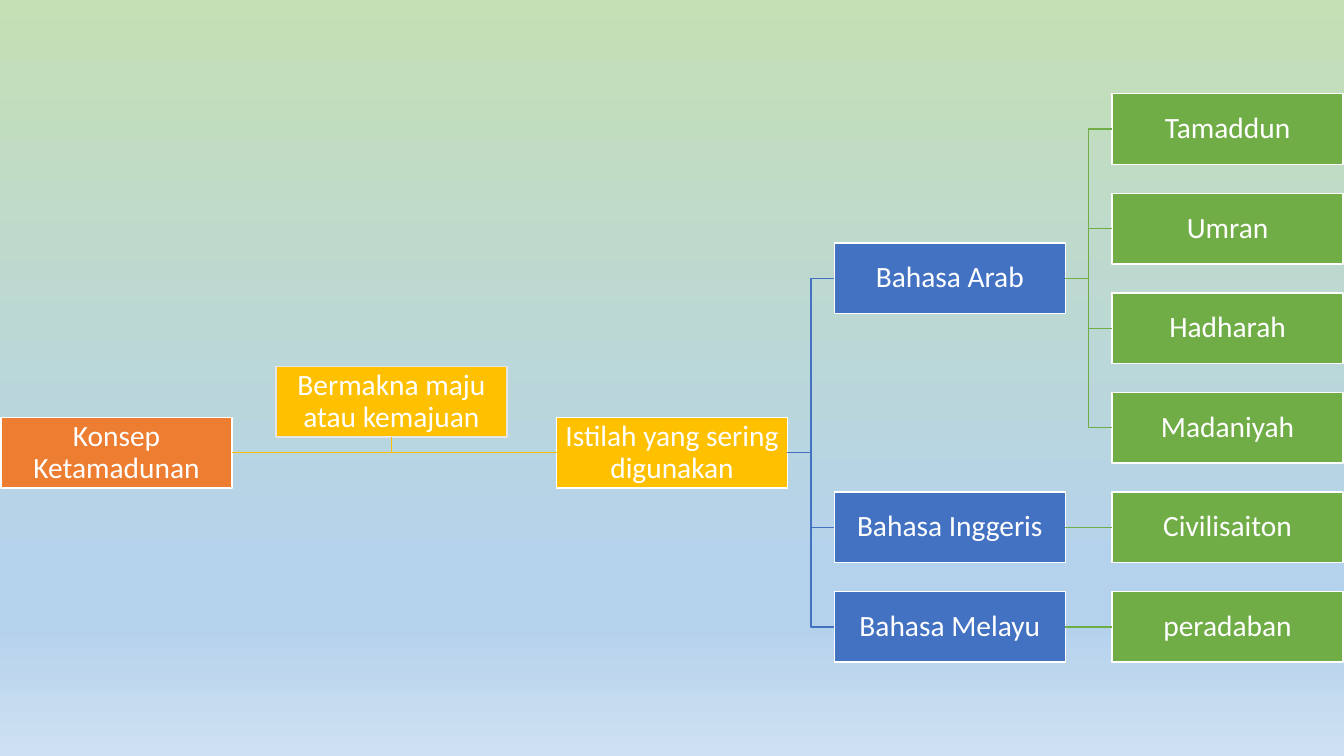
import pptx
import pptx.util
import pptx.dml.color
import pptx.enum.shapes
import pptx.enum.text
import pptx.oxml.ns
from lxml import etree

RGBColor = pptx.dml.color.RGBColor
Inches = pptx.util.Inches
Connector = pptx.enum.shapes.MSO_CONNECTOR
qn = pptx.oxml.ns.qn

ORANGE = RGBColor(0xED, 0x7D, 0x31)
GOLD = RGBColor(0xFF, 0xC0, 0x00)
BLUE = RGBColor(0x43, 0x72, 0xC3)
GREEN = RGBColor(0x70, 0xAD, 0x47)
WHITE = RGBColor(0xFF, 0xFF, 0xFF)
PALE_GREY = RGBColor(0xE6, 0xE6, 0xE6)
MEADOW = RGBColor(0xC5, 0xE0, 0xB4)
SKY = RGBColor(0xB5, 0xD2, 0xEC)
PALE_SKY = RGBColor(0xCE, 0xE1, 0xF2)

# Grid: five levels across, six leaf rows down
LEFT, RIGHT_LEVEL, LEVELS = 0.01, 11.03, 5
FIRST_ROW, LAST_ROW, ROWS = 1.28, 6.22, 6
LEVEL_STEP = (RIGHT_LEVEL - LEFT) / (LEVELS - 1)
ROW_STEP = (LAST_ROW - FIRST_ROW) / (ROWS - 1)
BOX_W, BOX_H = 2.29, 0.7

deck = pptx.Presentation()
deck.slide_width, deck.slide_height = Inches(13.33), Inches(7.5)
slide = deck.slides.add_slide(deck.slide_layouts[6])


def add_term(text, *, level, row, fill, border=WHITE, size=21, font="Calibri", color=WHITE):
    box = slide.shapes.add_shape(
        pptx.enum.shapes.MSO_SHAPE.RECTANGLE,
        Inches(LEFT + level * LEVEL_STEP),
        Inches(FIRST_ROW + row * ROW_STEP - BOX_H / 2),
        Inches(BOX_W), Inches(BOX_H))
    box.shadow.inherit = False
    box.fill.solid()
    box.fill.fore_color.rgb = fill
    box.line.color.rgb = border
    box.line.width = pptx.util.Pt(1)
    frame = box.text_frame
    frame.word_wrap = True
    frame.vertical_anchor = pptx.enum.text.MSO_ANCHOR.MIDDLE
    frame.margin_left = frame.margin_right = Inches(0.01)
    frame.margin_top = frame.margin_bottom = Inches(0.01)
    paragraph = frame.paragraphs[0]
    paragraph.alignment = pptx.enum.text.PP_ALIGN.CENTER
    paragraph.line_spacing = 0.9
    run = paragraph.add_run()
    run.text = text
    run.font.size = pptx.util.Pt(size)
    run.font.name = font
    run.font.color.rgb = color
    return box


def add_branch(parent, side, color, child=None, end=(0, 0)):
    """Join a side of parent to the left of child, or to a free end point."""
    level_line = child is None or child.top == parent.top
    kind = Connector.STRAIGHT if level_line else Connector.ELBOW
    branch = slide.shapes.add_connector(kind, 0, 0, *end)
    branch.begin_connect(parent, side)
    if child is not None:
        branch.end_connect(child, 1)
    branch.line.color.rgb = color
    branch.line.width = pptx.util.Pt(1)
    etree.SubElement(branch._element.spPr, qn("a:effectLst"))


# Background gradient, top to bottom
backdrop = slide.background.fill
backdrop.gradient()
backdrop.gradient_angle = 270
stops = next(slide._element.iter(qn("a:gsLst")))
for stop in list(stops):
    stops.remove(stop)
for percent, color in [(0, MEADOW), (74, SKY), (83, SKY), (100, PALE_SKY)]:
    stop = etree.SubElement(stops, qn("a:gs"), pos=str(percent * 1000))
    etree.SubElement(stop, qn("a:srgbClr"), val=str(color))

# Concept, its meaning and the terms in use
languages = [
    ("Bahasa Arab", 1.5, ["Tamaddun", "Umran", "Hadharah", "Madaniyah"]),
    ("Bahasa Inggeris", 4, ["Civilisaiton"]),
    ("Bahasa Melayu", 5, ["peradaban"]),
]
trunk_row = (languages[0][1] + languages[-1][1]) / 2
concept = add_term("Konsep Ketamadunan", level=0, row=trunk_row, fill=ORANGE)
terms = add_term("Istilah yang sering digunakan", level=2, row=trunk_row, fill=GOLD)
meaning = add_term("Bermakna maju atau kemajuan", level=0.99, row=2.74,
                   fill=GOLD, border=PALE_GREY)
add_branch(concept, 3, GOLD, child=terms)
add_branch(meaning, 2, GOLD, end=(meaning.left + meaning.width // 2,
                                  concept.top + concept.height // 2))

# Languages and their words
leaf_row = 0
for name, row, words in languages:
    language = add_term(name, level=3, row=row, fill=BLUE)
    add_branch(terms, 3, BLUE, child=language)
    for word in words:
        leaf = add_term(word, level=4, row=leaf_row, fill=GREEN)
        add_branch(language, 3, GREEN, child=leaf)
        leaf_row += 1

deck.save("out.pptx")
